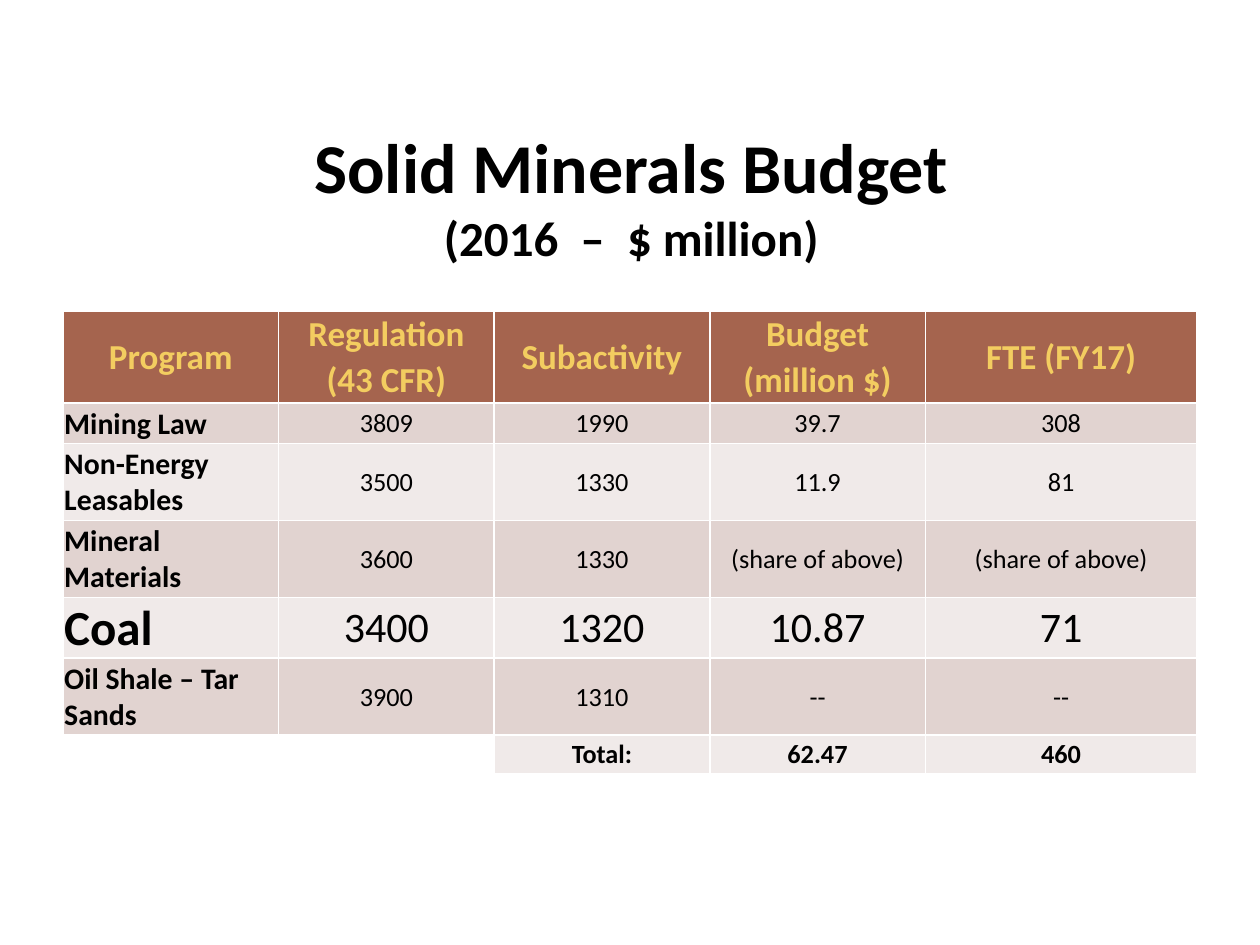
from dataclasses import dataclass
from typing import NamedTuple

from lxml import etree
from pptx import Presentation
from pptx.dml.color import RGBColor
from pptx.enum import text
from pptx.oxml import ns
from pptx.util import Pt


@dataclass(frozen=True)
class Theme:
    font: str = "Calibri"
    ink: str = "000000"
    paper: str = "FFFFFF"
    head: str = "A5644E"
    gold: str = "F3CD60"
    dark: str = "E1D3D0"
    light: str = "F0EAE9"
    title: float = 40
    sub: float = 28
    label: float = 20
    name: float = 17
    value: float = 15
    thin: float = 1
    thick: float = 1.5


class Row(NamedTuple):
    high: float
    cells: tuple[str, ...]
    name: float
    value: float


class Look(NamedTuple):
    fill: str
    color: str
    size: float
    bold: bool
    align: text.PP_ALIGN


T = Theme()
LEFT, MID = text.PP_ALIGN.LEFT, text.PP_ALIGN.CENTER
COLS = (123.2,) * 4 + (155.2,)

# Header labels: one line spans both rows, two lines take a row each
HEADS = (("Program",), ("Regulation", "(43 CFR)"), ("Subactivity",),
         ("Budget", "(million $)"), ("FTE (FY17)",))
HEAD_H = (26, 26.5)
SHARE = "(share of above)"
ROWS = (
    Row(23, ("Mining Law", "3809", "1990", "39.7", "308"), T.name, T.value),
    Row(44, ("Non-Energy Leasables", "3500", "1330", "11.9", "81"), T.name, T.value),
    Row(44, ("Mineral Materials", "3600", "1330", SHARE, SHARE), T.name, T.value),
    Row(34.7, ("Coal", "3400", "1320", "10.87", "71"), 28, 24),
    Row(44, ("Oil Shale – Tar Sands", "3900", "1310", "--", "--"), T.name, T.value),
)
TOTAL = Row(22, ("", "", "Total:", "62.47", "460"), T.value, T.value)


def edge(cell, side: str, width: float) -> None:
    """Draw one cell border; zero width hides it."""
    line = etree.SubElement(cell._tc.get_or_add_tcPr(), ns.qn(f"a:ln{side}"),
                            w=str(Pt(width)))
    if width:
        fill = etree.SubElement(line, ns.qn("a:solidFill"))
        etree.SubElement(fill, ns.qn("a:srgbClr"), val=T.paper)
    else:
        etree.SubElement(line, ns.qn("a:noFill"))


def style(para, look: Look) -> None:
    para.alignment = look.align
    font = para.font
    font.name, font.size, font.bold = T.font, Pt(look.size), look.bold
    font.color.rgb = RGBColor.from_string(look.color)


def paint(cell, words: str, look: Look, top: float = T.thin,
          base: float = T.thin) -> None:
    """Set the borders, fill and text of a cell."""
    for side, width in zip("LRTB", (T.thin, T.thin, top, base)):
        edge(cell, side, width)
    cell.fill.solid()
    cell.fill.fore_color.rgb = RGBColor.from_string(look.fill)
    cell.margin_left = cell.margin_right = cell.margin_top = Pt(0.7)
    cell.margin_bottom = Pt(0)
    cell.vertical_anchor = text.MSO_ANCHOR.MIDDLE
    cell.text = words
    style(cell.text_frame.paragraphs[0], look)


def title(slide) -> None:
    box = slide.shapes.add_textbox(Pt(36.7), Pt(66.2), Pt(648), Pt(90))
    frame = box.text_frame
    frame.word_wrap = True
    frame.vertical_anchor = text.MSO_ANCHOR.MIDDLE
    para = frame.paragraphs[0]
    style(para, Look(T.paper, T.ink, T.title, True, MID))
    para.add_run().text = "Solid Minerals Budget"
    para.add_line_break()
    sub = para.add_run()
    sub.text = "(2016  –  $ million)"
    sub.font.size = Pt(T.sub)


def header(table) -> None:
    look = Look(T.head, T.gold, T.label, True, MID)
    for col, words in enumerate(HEADS):
        split = len(words) == 2
        upper, lower = table.cell(0, col), table.cell(1, col)
        paint(upper, words[0], look, base=0 if split else T.thick)
        paint(lower, words[1] if split else "", look,
              top=0 if split else T.thin, base=T.thick)
        if not split:
            upper.merge(lower)


def body(table) -> None:
    for num, row in enumerate((*ROWS, TOTAL)):
        last = row is TOTAL
        band = T.light if num % 2 or last else T.dark
        for col, words in enumerate(row.cells):
            first = col == 0
            look = Look(band if words else T.paper, T.ink,
                        row.name if first else row.value,
                        first or last, LEFT if first else MID)
            paint(table.cell(num + 2, col), words, look,
                  top=T.thin if num else T.thick)


def grid(slide) -> None:
    highs = (*HEAD_H, *(row.high for row in ROWS), TOTAL.high)
    table = slide.shapes.add_table(len(highs), len(COLS), Pt(36), Pt(178),
                                   Pt(sum(COLS)), Pt(sum(highs))).table
    table.first_row = table.horz_banding = False
    for col, width in zip(table.columns, COLS):
        col.width = Pt(width)
    for row, high in zip(table.rows, highs):
        row.height = Pt(high)
    header(table)
    body(table)


def main() -> None:
    deck = Presentation()
    deck.slide_width, deck.slide_height = Pt(720), Pt(540)
    slide = deck.slides.add_slide(deck.slide_layouts[6])
    title(slide)
    grid(slide)
    deck.save("out.pptx")


if __name__ == "__main__":
    main()
